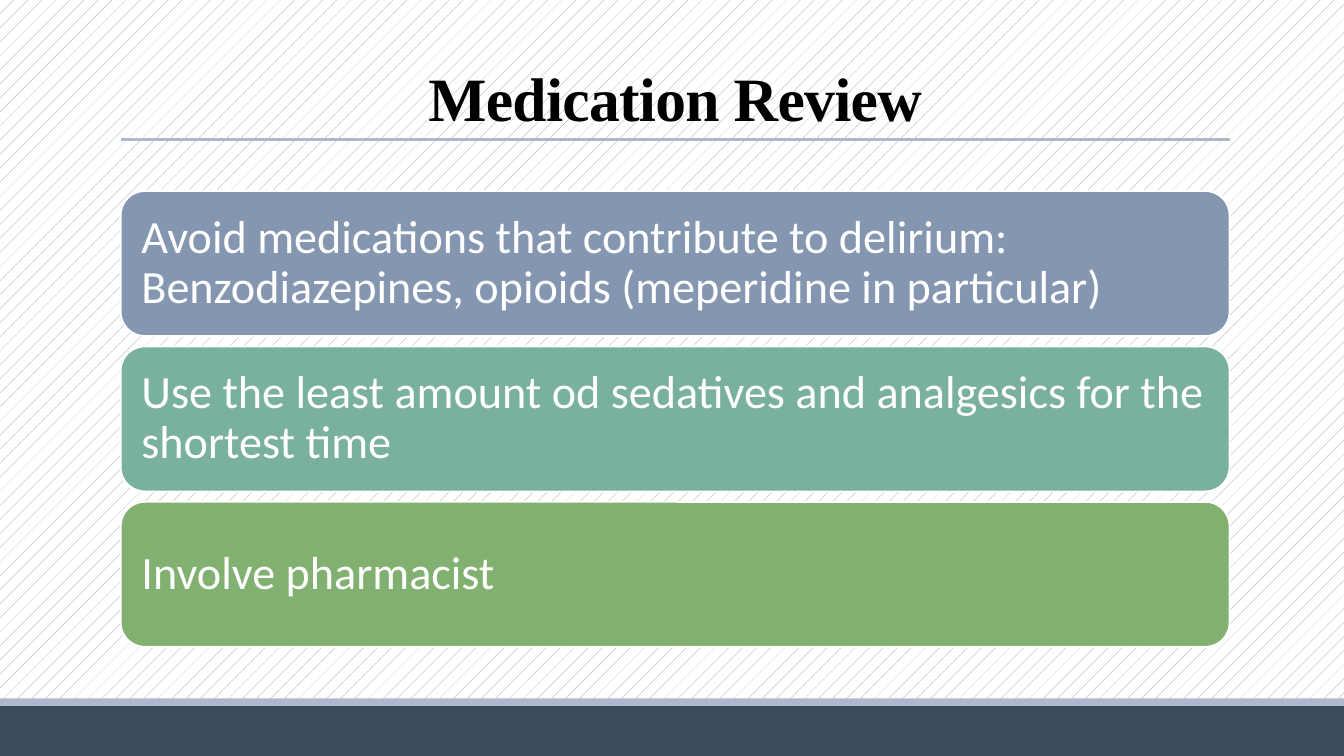
from pptx import Presentation
from pptx.dml.color import RGBColor
from pptx.enum.dml import MSO_PATTERN
from pptx.enum.shapes import MSO_CONNECTOR, MSO_SHAPE
from pptx.enum.text import MSO_ANCHOR, MSO_AUTO_SIZE, PP_ALIGN
from pptx.oxml.ns import qn
from pptx.util import Pt
from lxml.etree import SubElement

PX = 9525
COLORS = {name: RGBColor.from_string(value) for name, value in {
    "black": "000000", "white": "FFFFFF", "navy": "3C4A5E", "pale": "ADB9CA",
    "slate": "8496B0", "teal": "7AB09E", "green": "81B070"}.items()}


def write_text(frame, text, *, font, size, color, bold=False, align=PP_ALIGN.LEFT,
               anchor=MSO_ANCHOR.MIDDLE, line_spacing=0.9, tracking=0):
    frame.word_wrap = True
    frame.auto_size = MSO_AUTO_SIZE.NONE
    frame.vertical_anchor = anchor
    para = frame.paragraphs[0]
    para.alignment = align
    para.line_spacing = line_spacing
    span = para.add_run()
    span.text = text
    span.font.name = font
    span.font.size = Pt(size)
    span.font.bold = bold
    span.font.color.rgb = COLORS[color]
    if tracking:
        span._r.get_or_add_rPr().set("spc", str(int(tracking * 100)))


def add_box(page, kind, left, top, width, height, fill):
    box = page.shapes.add_shape(kind, left * PX, top * PX, width * PX, height * PX)
    box.shadow.inherit = False
    box.fill.solid()
    box.fill.fore_color.rgb = COLORS[fill]
    box.line.fill.background()
    return box


deck = Presentation()
deck.slide_width, deck.slide_height = 1280 * PX, 720 * PX
page = deck.slides.add_slide(deck.slide_layouts[5])

backdrop = page.background.fill
backdrop.patterned()
backdrop.pattern = MSO_PATTERN.PERCENT_5
backdrop.fore_color.rgb = COLORS["slate"]
backdrop.back_color.rgb = COLORS["white"]

add_box(page, MSO_SHAPE.RECTANGLE, 0, 672, 1280, 48, "navy")
add_box(page, MSO_SHAPE.RECTANGLE, 0, 665, 1280, 7, "pale")

LEFT, WIDTH, RULE_TOP = 115, 1056, 133
rule = page.shapes.add_connector(MSO_CONNECTOR.STRAIGHT, LEFT * PX, RULE_TOP * PX,
                                 (LEFT + WIDTH) * PX, RULE_TOP * PX)
rule.line.color.rgb = COLORS["pale"]
rule.line.width = Pt(2.25)
SubElement(rule._element.spPr, qn("a:effectLst"))

title = page.shapes.title
title.left, title.top, title.width, title.height = LEFT * PX, 30 * PX, WIDTH * PX, 103 * PX
write_text(title.text_frame, "Medication Review", font="Times New Roman", size=44,
           color="black", bold=True, align=PP_ALIGN.CENTER, anchor=MSO_ANCHOR.BOTTOM,
           line_spacing=0.85, tracking=-0.5)

CARDS = [
    ("slate", "Avoid medications that contribute to delirium: "
              "Benzodiazepines, opioids (meperidine in particular)"),
    ("teal", "Use the least amount od sedatives and analgesics for the shortest time"),
    ("green", "Involve pharmacist"),
]
for index, (fill, text) in enumerate(CARDS):
    card = add_box(page, MSO_SHAPE.ROUNDED_RECTANGLE, LEFT, 182 + 148 * index, WIDTH, 138, fill)
    card.line.color.rgb = COLORS["white"]
    card.line.width = Pt(1.25)
    frame = card.text_frame
    frame.margin_left = frame.margin_right = frame.margin_top = frame.margin_bottom = 13 * PX
    write_text(frame, text, font="Calibri", size=33, color="white")

deck.save("out.pptx")
